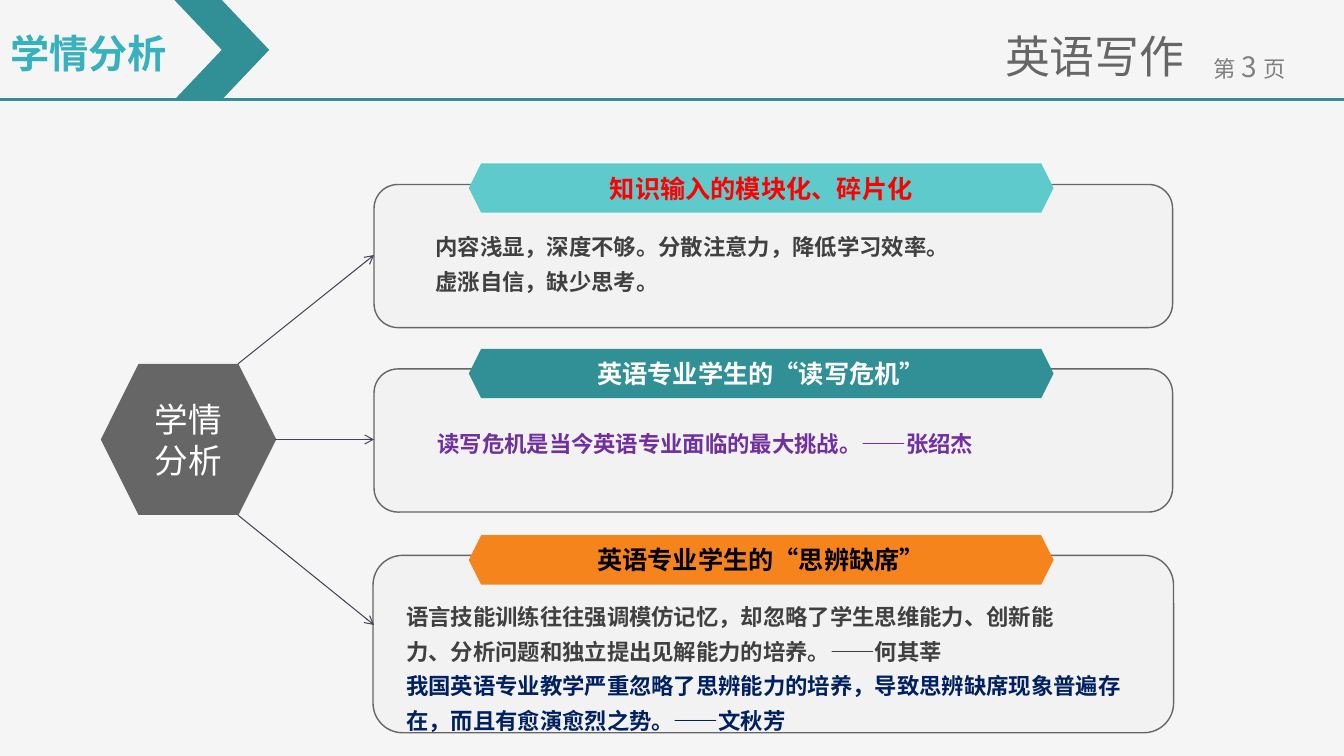
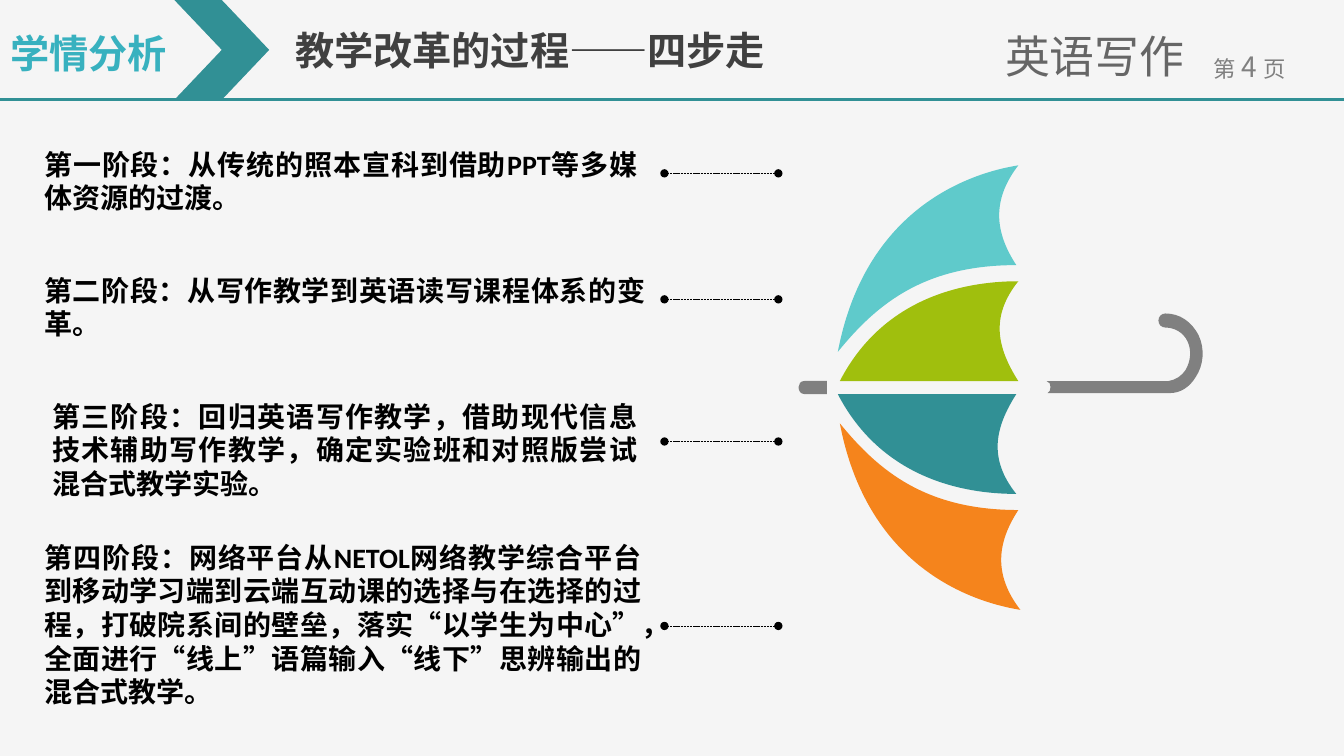
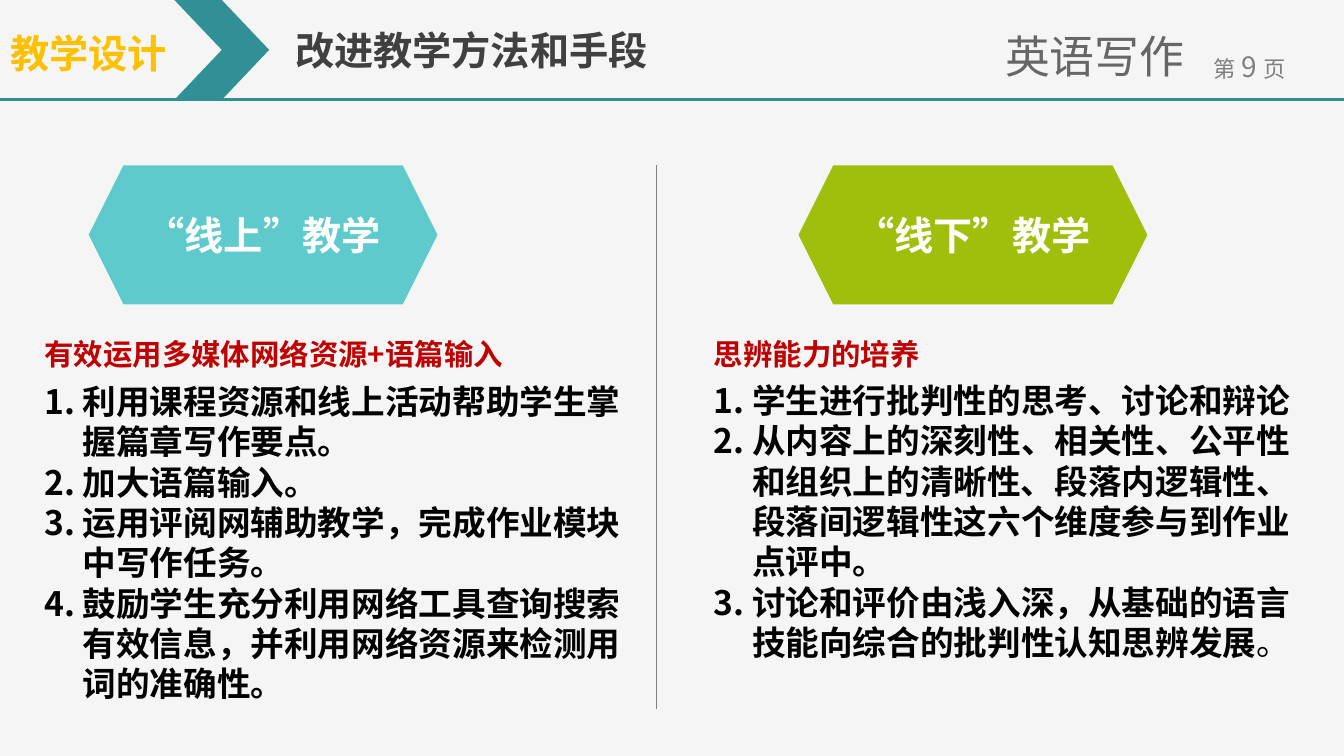
from lxml import etree
from pptx import Presentation
from pptx.dml.color import RGBColor
from pptx.enum import dml, shapes, text
from pptx.oxml import ns
from pptx.util import Inches, Pt

PAPER = RGBColor(0xF5, 0xF5, 0xF5)
CARD = RGBColor(0xF2, 0xF2, 0xF2)
WHITE = RGBColor(0xFF, 0xFF, 0xFF)
BLACK = RGBColor(0, 0, 0)
CHARCOAL = RGBColor(0x40, 0x40, 0x40)
SLATE = RGBColor(0x41, 0x44, 0x55)
DARK_GREY = RGBColor(0x66, 0x66, 0x66)
GREY = RGBColor(0x80, 0x80, 0x80)
TEAL = RGBColor(0x31, 0x90, 0x95)
AQUA = RGBColor(0x5F, 0xCA, 0xCB)
CYAN = RGBColor(0x38, 0xB1, 0xBF)
GREEN = RGBColor(0xA0, 0xBF, 0x0D)
ORANGE = RGBColor(0xF5, 0x84, 0x1C)
AMBER = RGBColor(0xFF, 0xC0, 0x00)
RED = RGBColor(0xFF, 0, 0)
DARK_RED = RGBColor(0xC0, 0, 0)
PURPLE = RGBColor(0x70, 0x30, 0xA0)
NAVY = RGBColor(0, 0x20, 0x60)

SANS = "Noto Sans CJK SC"
LEFT, CENTER, JUSTIFY = (
    text.PP_ALIGN.LEFT, text.PP_ALIGN.CENTER, text.PP_ALIGN.JUSTIFY)
TOP, MIDDLE = text.MSO_ANCHOR.TOP, text.MSO_ANCHOR.MIDDLE

HEADING = dict(size=Pt(28), bold=True)
STAGE = dict(size=Pt(20), bold=True, name="Calibri", color=BLACK)
LIST = dict(size=Pt(24), bold=True, name="Calibri", color=BLACK)
NOTE = dict(size=Pt(16), bold=True, color=CHARCOAL)


def inches(*values):
    return [Inches(value) for value in values]


def style_run(run, style):
    values = {"name": SANS, "bold": False, **style}
    color = values.pop("color")
    for name, value in values.items():
        setattr(run.font, name, value)
    run.font.color.rgb = color
    east_asian = etree.SubElement(run.font._element, ns.qn("a:ea"))
    east_asian.set("typeface", SANS)


def write(shape, paragraphs, style, anchor=TOP, **layout):
    """Fill a shape; a paragraph is a string or a list of (text, changes)."""
    frame = shape.text_frame
    frame.word_wrap = True
    frame.auto_size = text.MSO_AUTO_SIZE.NONE
    frame.vertical_anchor = anchor
    layout = {"alignment": LEFT, "space_before": Pt(0), **layout}
    for index, content in enumerate(paragraphs):
        paragraph = frame.add_paragraph() if index else frame.paragraphs[0]
        for name, value in layout.items():
            setattr(paragraph, name, value)
        runs = [(content, {})] if isinstance(content, str) else content
        for words, changes in runs:
            run = paragraph.add_run()
            run.text = words
            style_run(run, {**style, **changes})


def add_text(slide, box, paragraphs, style, **layout):
    write(slide.shapes.add_textbox(*inches(*box)), paragraphs, style, **layout)


def fill_placeholder(placeholder, box, paragraphs, style, **layout):
    sides = ("left", "top", "width", "height")
    for side, value in zip(sides, inches(*box)):
        setattr(placeholder, side, value)
    write(placeholder, paragraphs, style, **layout)


def number_paragraphs(placeholder):
    for paragraph in placeholder.text_frame.paragraphs:
        properties = paragraph._p.get_or_add_pPr()
        properties.set("marL", str(Inches(0.38)))
        properties.set("indent", str(-Inches(0.38)))
        bullet = etree.SubElement(properties, ns.qn("a:buAutoNum"))
        bullet.set("type", "arabicPeriod")


def paint(shape, fill, outline=None):
    shape.shadow.inherit = False
    shape.fill.solid()
    shape.fill.fore_color.rgb = fill
    if outline is None:
        shape.line.fill.background()
    else:
        shape.line.color.rgb = outline
        shape.line.width = Pt(1)


def add_preset(slide, kind, box, fill, outline=None):
    shape = slide.shapes.add_shape(kind, *inches(*box))
    paint(shape, fill, outline)
    return shape


def add_hexagon(slide, box, fill, words, style, margin=0.1):
    shape = add_preset(slide, shapes.MSO_SHAPE.HEXAGON, box, fill)
    for side in ("margin_left", "margin_right"):
        setattr(shape.text_frame, side, Inches(margin))
    write(shape, [words], style, anchor=MIDDLE, alignment=CENTER)


def add_line(slide, start, end, color, width, dash=None, **ends):
    """Draw a line; ends may give headEnd and tailEnd types."""
    connector = slide.shapes.add_connector(
        shapes.MSO_CONNECTOR.STRAIGHT, *inches(*start, *end))
    line = connector.line
    line.color.rgb = color
    line.width = Pt(width)
    if dash:
        line.dash_style = dash
    for tag, kind in ends.items():
        end_mark = etree.SubElement(line._get_or_add_ln(), ns.qn(f"a:{tag}"))
        end_mark.set("type", kind)
    etree.SubElement(connector._element.spPr, ns.qn("a:effectLst"))


def pairs(segment):
    return list(zip(segment[::2], segment[1::2]))


def add_outline(slide, segments, fill):
    """Draw a start point, then points (x, y) and cubic curves (six numbers)."""
    start, *rest = segments
    builder = slide.shapes.build_freeform(*inches(*start), scale=1.0)
    vertices = [inches(*point) for segment in rest for point in pairs(segment)]
    builder.add_line_segments(vertices, close=True)
    shape = builder.convert_to_shape()
    steps = shape._element.iter(ns.qn("a:lnTo"))
    steps = iter(list(steps))
    for segment in rest:
        step = next(steps)
        if len(segment) == 6:
            curve = etree.Element(ns.qn("a:cubicBezTo"))
            step.addprevious(curve)
            for control in (step, next(steps), next(steps)):
                curve.append(control[0])
                control.getparent().remove(control)
    paint(shape, fill)


def mirror(segments, shift):
    """Reflect an outline in the umbrella's stick."""
    return [tuple(value for x, y in pairs(segment)
                  for value in (x + shift, 7.69 - y))
            for segment in segments]


def add_umbrella(slide):
    outer = [(8.31, 3.49),
             (8.57, 2.12, 9.54, 1.73, 10.1, 1.64),
             (9.83, 1.99, 9.87, 2.31, 10.08, 2.63),
             (9.17, 2.63, 8.7, 3.01, 8.31, 3.49)]
    inner = [(8.33, 3.78),
             (8.75, 2.97, 9.53, 2.79, 10.1, 2.79),
             (9.82, 3.14, 9.89, 3.45, 10.1, 3.78)]
    tip = [(7.98, 3.78), (8.2, 3.78), (8.2, 3.91), (7.98, 3.91),
           (7.94, 3.91, 7.92, 3.88, 7.92, 3.84),
           (7.92, 3.81, 7.94, 3.78, 7.98, 3.78)]
    handle = [(11.56, 3.11),
              (11.7, 3.11, 11.82, 3.19, 11.89, 3.33),
              (11.95, 3.46, 11.94, 3.62, 11.86, 3.74),
              (11.8, 3.84, 11.71, 3.9, 11.6, 3.9),
              (10.39, 3.9),
              (10.41, 3.89, 10.42, 3.87, 10.42, 3.84),
              (10.42, 3.81, 10.41, 3.79, 10.38, 3.78),
              (11.59, 3.78),
              (11.66, 3.77, 11.72, 3.73, 11.76, 3.67),
              (11.81, 3.58, 11.82, 3.48, 11.78, 3.39),
              (11.74, 3.3, 11.65, 3.25, 11.56, 3.25),
              (11.52, 3.25, 11.49, 3.22, 11.49, 3.18),
              (11.49, 3.14, 11.52, 3.11, 11.56, 3.11)]
    for segments, fill in (
            (outer, AQUA), (inner, GREEN), (mirror(inner, -0.02), TEAL),
            (mirror(outer, 0.02), ORANGE), (tip, GREY), (handle, GREY)):
        add_outline(slide, segments, fill)


def add_page(presentation, layout, section, color, number, heading=None):
    """Add a slide with the shared header."""
    slide = presentation.slides.add_slide(
        presentation.slide_layouts.get_by_name(layout))
    fill_placeholder(slide.shapes.title, (0, 0.24, 4.46, 0.57), [section],
                     {**HEADING, "color": color})
    add_line(slide, (0, 0.99), (13.33, 0.99), TEAL, 2.25)
    add_preset(slide, shapes.MSO_SHAPE.CHEVRON, (1.73, 0, 0.94, 0.99), TEAL)
    if heading:
        add_text(slide, (2.83, 0.21, 5.4, 0.57), [heading],
                 {**HEADING, "color": CHARCOAL})
    add_text(slide, (9.87, 0.24, 2, 0.64), ["英语写作"],
             dict(size=Pt(32), name="Roboto", color=DARK_GREY))
    page_number = [("第", {}), (" ", {"size": Pt(18)}),
                   (str(number), {"size": Pt(20)}),
                   (" ", {"size": Pt(18)}), ("页", {})]
    add_text(slide, (11.81, 0.44, 1.17, 0.44), [page_number],
             dict(size=Pt(16), color=GREY), alignment=CENTER)
    return slide


def add_analysis_slide(presentation):
    slide = add_page(presentation, "Title Only", "学情分析", CYAN, 3)
    cards = [
        ((3.71, 1.83, 7.92, 1.42), 1.62, AQUA, RED,
         "知识输入的模块化、碎片化", (4.22, 2.18, 7.1, 0.77),
         ["内容浅显，深度不够。分散注意力，降低学习效率。",
          "虚涨自信，缺少思考。"]),
        ((3.71, 3.66, 7.92, 1.42), 3.46, TEAL, WHITE,
         "英语专业学生的“读写危机”", (4.24, 4.14, 7.17, 0.42),
         [[("读写危机是当今英语专业面临的最大挑战。——张绍杰",
            {"color": PURPLE})]]),
        ((3.7, 5.51, 7.94, 1.76), 5.31, ORANGE, BLACK,
         "英语专业学生的“思辨缺席”", (3.93, 5.85, 7.4, 1.81),
         ["语言技能训练往往强调模仿记忆，却忽略了学生思维能力、创新能",
          "力、分析问题和独立提出见解能力的培养。——何其莘",
          [("我国英语专业教学严重忽略了思辨能力的培养，导致思辨缺席现象"
            "普遍存在，而且有愈演愈烈之势。——文秋芳", {"color": NAVY})]]),
    ]
    for card, band_top, fill, color, caption, note, paragraphs in cards:
        add_preset(slide, shapes.MSO_SHAPE.ROUNDED_RECTANGLE, card, CARD,
                   DARK_GREY)
        add_hexagon(slide, (4.65, band_top, 5.8, 0.49), fill, caption,
                    dict(size=Pt(18), bold=True, color=color))
        add_text(slide, note, paragraphs, NOTE, line_spacing=1.3)
    add_hexagon(slide, (1, 3.61, 1.74, 1.5), DARK_GREY, "学情分析",
                dict(size=Pt(24), color=WHITE), margin=0.22)
    for start, end_top in (((2.36, 3.61), 2.53), ((2.73, 4.36), 4.36),
                           ((2.36, 5.11), 6.2)):
        add_line(slide, start, (3.71, end_top), SLATE, 0.75, tailEnd="arrow")


def add_stages_slide(presentation):
    slide = add_page(presentation, "Title Only", "学情分析", CYAN, 4,
                     "教学改革的过程——四步走")
    add_umbrella(slide)
    stages = [
        ((0.34, 1.41, 6.08, 0.77), 1.72,
         "第一阶段：从传统的照本宣科到借助PPT等多媒体资源的过渡。"),
        ((0.34, 2.66, 6.16, 0.77), 2.97,
         "第二阶段：从写作教学到英语读写课程体系的变革。"),
        ((0.42, 3.91, 6, 1.11), 4.38,
         "第三阶段：回归英语写作教学，借助现代信息技术辅助写作教学，"
         "确定实验班和对照版尝试混合式教学实验。"),
        ((0.34, 5.31, 6.12, 1.78), 6.21,
         "第四阶段：网络平台从NETOL网络教学综合平台到移动学习端到"
         "云端互动课的选择与在选择的过程，打破院系间的壁垒，落实“以学生"
         "为中心”，全面进行“线上”语篇输入“线下”思辨输出的混合式教学。"),
    ]
    for box, line_top, words in stages:
        add_text(slide, box, [words], STAGE, alignment=JUSTIFY)
        add_line(slide, (7.72, line_top), (6.59, line_top), BLACK, 0.5,
                 dml.MSO_LINE.SQUARE_DOT, headEnd="oval", tailEnd="oval")


def add_methods_slide(presentation):
    slide = add_page(presentation, "Comparison", "教学设计", AMBER, 9,
                     "改进教学方法和手段")
    add_line(slide, (6.51, 1.64), (6.51, 7.03), GREY, 0.25)
    columns = [
        (0.88, AQUA, "“线上”教学",
         (0.34, 3.28, 5.21, 0.45), "有效运用多媒体网络资源+语篇输入",
         (0.34, 3.73, 5.94, 3.33),
         ["利用课程资源和线上活动帮助学生掌握篇章写作要点。",
          "加大语篇输入。",
          "运用评阅网辅助教学，完成作业模块中写作任务。",
          "鼓励学生充分利用网络工具查询搜索有效信息，"
          "并利用网络资源来检测用词的准确性。"]),
        (7.92, GREEN, "“线下”教学",
         (6.98, 3.28, 2.26, 0.45), "思辨能力的培养",
         (6.98, 3.72, 6.02, 2.93),
         ["学生进行批判性的思考、讨论和辩论",
          "从内容上的深刻性、相关性、公平性和组织上的清晰性、"
          "段落内逻辑性、段落间逻辑性这六个维度参与到作业点评中。",
          [("讨论和评价由浅入深，从基础的语言技能向综合的"
            "批判性认知思辨发展", {}), ("。", {"bold": False})]]),
    ]
    for index, column in enumerate(columns):
        badge_left, fill, badge, topic_box, topic, list_box, items = column
        add_hexagon(slide, (badge_left, 1.64, 3.46, 1.38), fill, badge,
                    {**HEADING, "color": WHITE})
        topic_holder = slide.placeholders[1 + 2 * index]
        list_holder = slide.placeholders[2 + 2 * index]
        fill_placeholder(topic_holder, topic_box, [topic],
                         dict(size=Pt(21), bold=True, color=DARK_RED))
        fill_placeholder(list_holder, list_box, items, LIST)
        number_paragraphs(list_holder)


def main():
    presentation = Presentation()
    presentation.slide_width, presentation.slide_height = inches(13.33, 7.5)
    background = presentation.slide_master.background.fill
    background.solid()
    background.fore_color.rgb = PAPER
    add_analysis_slide(presentation)
    add_stages_slide(presentation)
    add_methods_slide(presentation)
    presentation.save("out.pptx")


if __name__ == "__main__":
    main()
